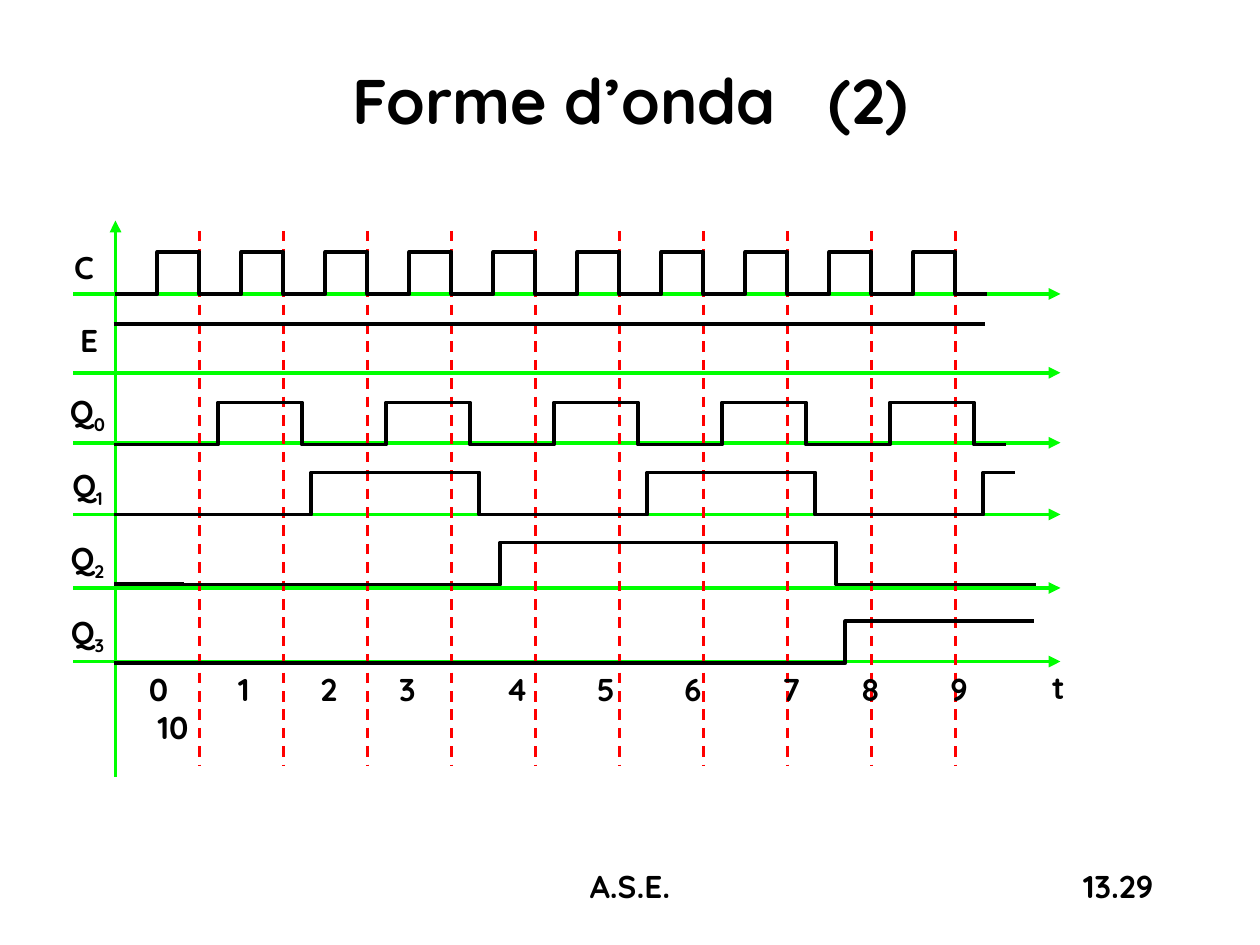
from lxml import etree
from pptx import Presentation
from pptx import util as u
from pptx.dml.color import RGBColor
from pptx.enum import dml, shapes, text
from pptx.oxml.ns import qn

COLORS = {"text": "000000", "wave": "000000", "axis": "00FF00", "edge": "FF0000"}
FONT = "Quicksand"
Pt = u.Pt
LEFT, CENTER, RIGHT = text.PP_ALIGN.LEFT, text.PP_ALIGN.CENTER, text.PP_ALIGN.RIGHT
MIDDLE, TOP = text.MSO_ANCHOR.MIDDLE, text.MSO_ANCHOR.TOP

presentation = Presentation()
presentation.slide_width, presentation.slide_height = Pt(720), Pt(540)
slide = presentation.slides.add_slide(presentation.slide_layouts[5])


def add_line(x1, y1, x2, y2, color, width=2.25, arrow=False, dashed=False):
    line = slide.shapes.add_connector(
        shapes.MSO_CONNECTOR.STRAIGHT, Pt(x1), Pt(y1), Pt(x2), Pt(y2))
    line.line.color.rgb = RGBColor.from_string(COLORS[color])
    line.line.width = Pt(width)
    if dashed:
        line.line.dash_style = dml.MSO_LINE.DASH
    properties = line._element.spPr
    if arrow:
        etree.SubElement(properties.find(qn("a:ln")), qn("a:tailEnd"), type="triangle")
    etree.SubElement(properties, qn("a:effectLst"))


def write(shape, paragraphs, align, anchor, size=18):
    frame = shape.text_frame
    frame.word_wrap = True
    frame.vertical_anchor = anchor
    for index, pieces in enumerate(paragraphs):
        paragraph = frame.add_paragraph() if index else frame.paragraphs[0]
        paragraph.alignment = align
        for piece, attributes in pieces:
            run = paragraph.add_run()
            run.text = piece
            run.font.name, run.font.size, run.font.bold = FONT, Pt(size), True
            run.font.color.rgb = RGBColor.from_string(COLORS["text"])
            for name, value in attributes.items():
                run.font._element.set(name, value)


title = slide.shapes.title
title.left, title.top, title.width, title.height = Pt(12), Pt(12), Pt(696), Pt(90)
write(title, [[("Forme d’onda", {}), (" ", {"spc": "2000"}), ("(2)", {})]],
      CENTER, MIDDLE, 36)

for axis_y in (168, 213, 253, 294, 336, 378):
    add_line(42, axis_y, 606, axis_y, "axis", arrow=True)
add_line(66, 444, 66, 126, "axis", arrow=True)

for cycle in range(10):
    edge_x = 114 + 48 * cycle
    add_line(edge_x, 132, edge_x, 438, "edge", 1.5, dashed=True)

add_line(65, 185, 563, 185, "wave")
for lead_y in (254, 294, 333.5, 379):
    add_line(105, lead_y, 65, lead_y, "wave")

waves = [
    (66, 90, 24, 20, 168, 564),
    (76.5, 124.6, 48, 10, 254, 574.6),
    (82, 178, 96, 5, 294, 580),
    (93.5, 286, 192, 2, 334, 592),
    (99.5, 483, 384, 1, 379, 591),
]
for start, first_edge, spacing, edges, low, end in waves:
    level, points = low, []
    for edge in range(edges):
        edge_x = first_edge + spacing * edge
        points.append((Pt(edge_x), Pt(level)))
        level = 2 * low - 24 - level
        points.append((Pt(edge_x), Pt(level)))
    points.append((Pt(end), Pt(level)))
    builder = slide.shapes.build_freeform(Pt(start), Pt(low))
    builder.add_line_segments(points, close=False)
    wave = builder.convert_to_shape()
    wave.shadow.inherit = False
    wave.fill.background()
    wave.line.color.rgb = RGBColor.from_string(COLORS["wave"])
    wave.line.width = Pt(2.25)

labels = [
    ("C", "", 30, 138, 36, 29, CENTER, MIDDLE),
    ("E", "", 36, 180, 30, 29, CENTER, MIDDLE),
    ("t", "", 594, 378, 25, 29, LEFT, TOP),
    ("13.29", "", 516, 492, 150, 36, RIGHT, TOP),
    ("A.S.E.", "", 246, 492, 228, 36, CENTER, TOP),
]
labels += [("Q", str(bit), 24, 222 + 42 * bit, 52, 29, CENTER, MIDDLE) for bit in range(4)]
for label, subscript, left, top, width, height, align, anchor in labels:
    box = slide.shapes.add_textbox(Pt(left), Pt(top), Pt(width), Pt(height))
    pieces = [(label, {})]
    if subscript:
        pieces.append((subscript, {"baseline": "-25000"}))
    write(box, [pieces], align, anchor)

counts = slide.shapes.add_textbox(Pt(78), Pt(390), Pt(510), Pt(29))
write(counts, [[("\t".join(str(count) for count in range(10)), {})], [("10", {})]],
      LEFT, MIDDLE)
first_row, second_row = counts.text_frame.paragraphs
tab_list = etree.SubElement(first_row._p.get_or_add_pPr(), qn("a:tabLst"))
for position in (51, 98, 143, 204, 256, 306, 362, 407, 458):
    etree.SubElement(tab_list, qn("a:tab"), pos=str(Pt(position)), algn="l")
second_row._p.get_or_add_pPr().set("marL", str(Pt(5)))

presentation.save("out.pptx")
